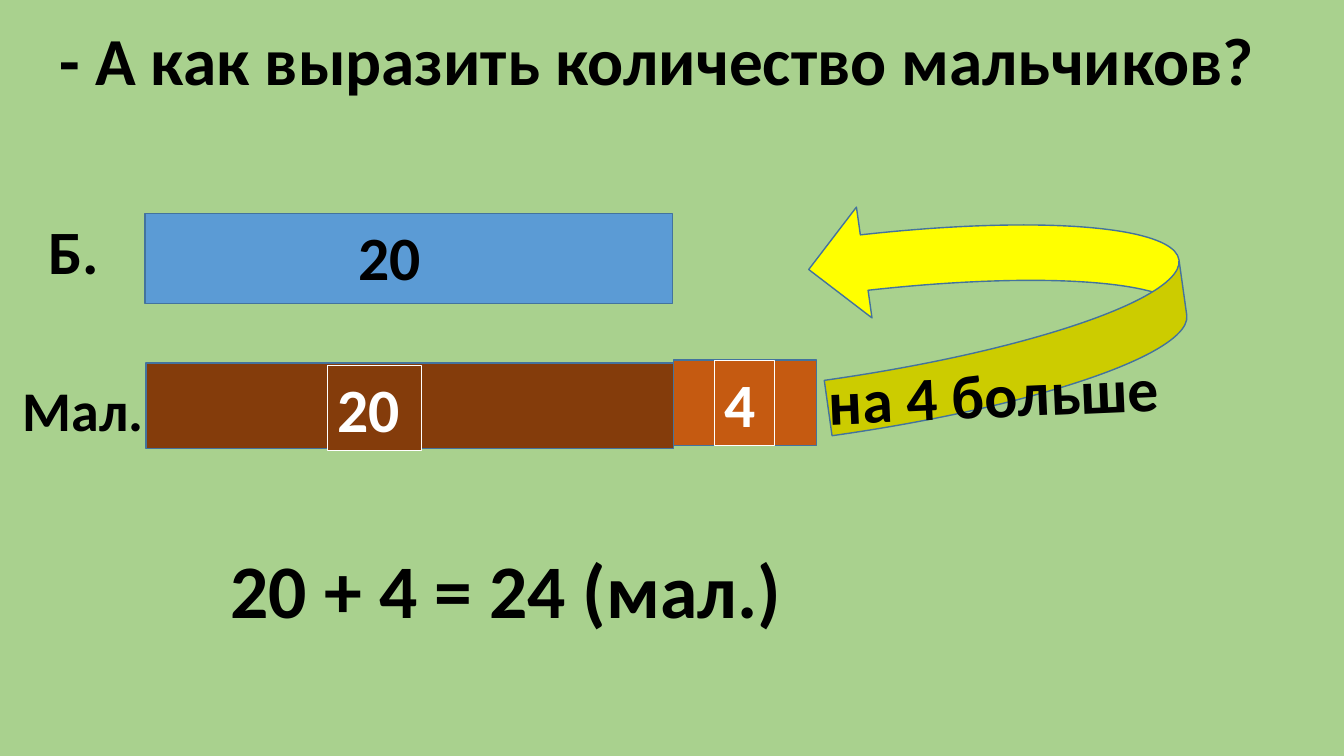
import pptx
import pptx.dml.color
import pptx.enum.shapes
import pptx.enum.text
import pptx.oxml.ns
import pptx.util
from dataclasses import dataclass

Inches = pptx.util.Inches
MSO_SHAPE = pptx.enum.shapes.MSO_SHAPE


@dataclass(frozen=True)
class Theme:
    font: str = "Calibri"
    background: str = "A9D18E"
    black: str = "000000"
    white: str = "FFFFFF"
    outline: str = "43739E"
    blue: str = "5B9BD5"
    brown: str = "843C0B"
    orange: str = "C55A11"
    yellow: str = "FFFF00"
    label: int = 40
    number: int = 44
    title: int = 48
    answer: int = 54


theme = Theme()


def add_figure(kind, box, fill, line, width):
    sp = slide.shapes.add_shape(kind, *map(Inches, box))
    sp.shadow.inherit = False
    sp.fill.solid()
    sp.fill.fore_color.rgb = pptx.dml.color.RGBColor.from_string(fill)
    sp.line.color.rgb = pptx.dml.color.RGBColor.from_string(line)
    sp.line.width = pptx.util.Pt(width)
    return sp


def write(sp, text, size, color):
    tf = sp.text_frame
    tf.word_wrap = True
    tf.auto_size = pptx.enum.text.MSO_AUTO_SIZE.SHAPE_TO_FIT_TEXT
    tf.vertical_anchor = pptx.enum.text.MSO_ANCHOR.TOP
    p = tf.paragraphs[0]
    p.alignment = pptx.enum.text.PP_ALIGN.LEFT
    r = p.add_run()
    r.text = text
    r.font.name = theme.font
    r.font.size = pptx.util.Pt(size)
    r.font.bold = True
    r.font.color.rgb = pptx.dml.color.RGBColor.from_string(color)


prs = pptx.Presentation()
prs.slide_width = Inches(13.33)
prs.slide_height = Inches(7.5)
slide = prs.slides.add_slide(prs.slide_layouts[6])
slide.background.fill.solid()
slide.background.fill.fore_color.rgb = pptx.dml.color.RGBColor.from_string(theme.background)

# Arrow from the longer bar back to the shorter one
arrow = add_figure(MSO_SHAPE.CURVED_LEFT_ARROW, (8.08, 1.86, 3.65, 2.22),
                   theme.yellow, theme.outline, 1)
arrow.rotation = 352
arrow.element.spPr.find(pptx.oxml.ns.qn("a:xfrm")).set("flipV", "1")

# Bars
bars = [
    ((1.44, 2.12, 5.23, 0.89), theme.blue),
    ((1.45, 3.6, 5.23, 0.85), theme.brown),
    ((6.68, 3.57, 1.42, 0.85), theme.orange),
]
for box, fill in bars:
    add_figure(MSO_SHAPE.RECTANGLE, box, fill, theme.outline, 1)

# Title, labels and answer
texts = [
    ("- А как выразить количество мальчиков?", (0.49, 0.13, 12.36, 0.91), theme.title, 0),
    ("на 4 больше", (8.12, 3.48, 3.79, 0.84), theme.number, 357.5),
    ("20", (3.46, 2.12, 1, 0.84), theme.number, 0),
    ("Б.", (0.38, 2.06, 1.06, 0.84), theme.number, 0),
    ("Мал.", (0.13, 3.68, 1.56, 0.77), theme.label, 0),
    ("20 + 4 = 24 (мал.)", (2.19, 5.34, 6.5, 1.01), theme.answer, 0),
]
for text, box, size, angle in texts:
    sp = slide.shapes.add_textbox(*map(Inches, box))
    sp.rotation = angle
    write(sp, text, size, theme.black)

# Framed numbers on the boys' bar
framed_numbers = [
    ("20", (3.25, 3.63, 0.93, 0.84), theme.brown),
    ("4", (7.09, 3.58, 0.59, 0.84), theme.orange),
]
for text, box, fill in framed_numbers:
    sp = add_figure(MSO_SHAPE.RECTANGLE, box, fill, theme.white, 0.75)
    write(sp, text, theme.number, theme.white)

prs.save("out.pptx")
